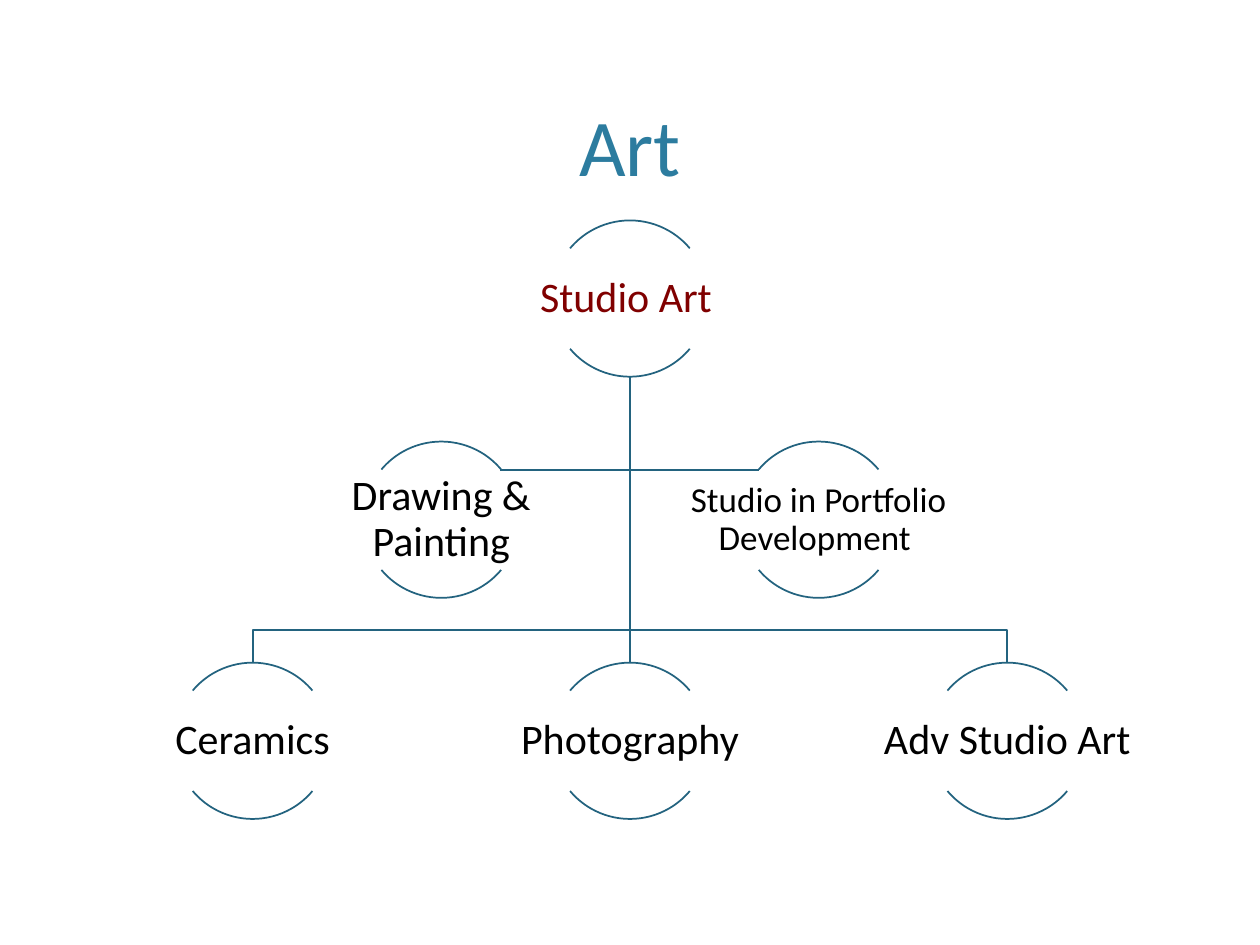
from pptx import Presentation
from pptx.dml.color import RGBColor
from pptx.enum.shapes import MSO_CONNECTOR, MSO_SHAPE
from pptx.enum.text import MSO_ANCHOR, PP_ALIGN
from pptx.oxml.ns import qn
from pptx.util import Inches, Pt
from lxml import etree

ARC, STRAIGHT = MSO_SHAPE.ARC, MSO_CONNECTOR.STRAIGHT
CENTER = PP_ALIGN.CENTER
MIDDLE, BOTTOM = MSO_ANCHOR.MIDDLE, MSO_ANCHOR.BOTTOM

TITLE_BLUE = RGBColor(0x2C, 0x7C, 0x9F)
LINE_BLUE = RGBColor(0x23, 0x63, 0x7F)
MAROON = RGBColor(0x80, 0x00, 0x00)
BLACK = RGBColor(0x00, 0x00, 0x00)
FONT = "Calibri"

CHART_BOX = (0.77, 1.75, 8.46, 4.75)
CIRCLE = 1.24
LABEL_WIDTH, LABEL_HEIGHT = 2.47, 0.79
ARCS = ((132, 192), (24, 84))
ELBOW_SHIFT = 0.47
BUS_GAP = 0.26

COURSES = (
    (2, 0, 0.02, (("Studio Art", 24, MAROON), (" ", 20, MAROON))),
    (0, 2, 0.02, (("Ceramics", 24, BLACK),)),
    (2, 2, 0.02, (("Photography", 24, BLACK),)),
    (4, 2, 0.02, (("Adv Studio Art", 24, BLACK),)),
    (1, 1, 0.02, (("Drawing & Painting", 24, BLACK),)),
    (3, 1, 0.01, (("Studio in Portfolio Development ", 20, BLACK),)),
)


def style_line(shape):
    """Give a shape or connector the thin chart line."""
    shape.line.color.rgb = LINE_BLUE
    shape.line.width = Pt(1)


def add_spans(para, spans):
    """Add centred runs of (text, size, colour) to a paragraph."""
    para.alignment = CENTER
    for text, size, colour in spans:
        span = para.add_run()
        span.text = text
        span.font.name = FONT
        span.font.size = Pt(size)
        span.font.color.rgb = colour


def add_title(page, box):
    """Place the slide title in the given box."""
    title = page.shapes.title
    title.left, title.top, title.width, title.height = map(Inches, box)
    title.text_frame.vertical_anchor = BOTTOM
    add_spans(title.text_frame.paragraphs[0], (("Art", 46, TITLE_BLUE),))


def add_branch(page, points):
    """Draw an open angled line through points in inches."""
    start, *corners = [(Inches(x), Inches(y)) for x, y in points]
    builder = page.shapes.build_freeform(*start)
    builder.add_line_segments(corners, close=False)
    branch = builder.convert_to_shape()
    branch.shadow.inherit = False
    branch.fill.background()
    style_line(branch)


def add_trunk(page, x, top, bottom):
    """Draw the straight line from the root to the course below it."""
    trunk = page.shapes.add_connector(
        STRAIGHT, Inches(x), Inches(top), Inches(x), Inches(bottom))
    style_line(trunk)
    etree.SubElement(trunk.element.find(qn("p:spPr")), qn("a:effectLst"))


def add_course(page, center, top, inset, spans):
    """Place a course label between two arcs of one circle."""
    for angles in ARCS:
        arc = page.shapes.add_shape(
            ARC, Inches(center - CIRCLE / 2), Inches(top),
            Inches(CIRCLE), Inches(CIRCLE))
        arc.adjustments[0], arc.adjustments[1] = angles
        arc.shadow.inherit = False
        arc.fill.background()
        style_line(arc)
    label = page.shapes.add_textbox(
        Inches(center - LABEL_WIDTH / 2),
        Inches(top + (CIRCLE - LABEL_HEIGHT) / 2),
        Inches(LABEL_WIDTH), Inches(LABEL_HEIGHT))
    frame = label.text_frame
    frame.word_wrap = True
    frame.vertical_anchor = MIDDLE
    frame.margin_left = frame.margin_right = Inches(inset)
    frame.margin_top = frame.margin_bottom = Inches(inset)
    para = frame.paragraphs[0]
    para.line_spacing = 0.9
    add_spans(para, spans)


def add_course_chart(page, box):
    """Lay out the course tree on five columns and three rows."""
    left, top, width, height = box
    column = (width - LABEL_WIDTH) / 4
    row = (height - CIRCLE) / 2
    centers = [left + LABEL_WIDTH / 2 + column * i for i in range(5)]
    tops = [top + row * i for i in range(3)]
    root = (centers[2], tops[0] + CIRCLE)
    elbow = tops[1] + (CIRCLE - LABEL_HEIGHT) / 2
    bus = tops[2] - BUS_GAP
    for x in (centers[3] - ELBOW_SHIFT, centers[1] + ELBOW_SHIFT):
        add_branch(page, (root, (root[0], elbow), (x, elbow)))
    for x in (centers[4], centers[0]):
        add_branch(page, (root, (root[0], bus), (x, bus), (x, tops[2])))
    add_trunk(page, *root, tops[2])
    for column_index, row_index, inset, spans in COURSES:
        add_course(page, centers[column_index], tops[row_index], inset, spans)


def main():
    """Build and save the deck."""
    deck = Presentation()
    deck.slide_width, deck.slide_height = Inches(10), Inches(7.5)
    page = deck.slides.add_slide(deck.slide_layouts[5])
    add_title(page, (0.6, 0.12, 8.8, 1.46))
    add_course_chart(page, CHART_BOX)
    deck.save("out.pptx")


if __name__ == "__main__":
    main()
